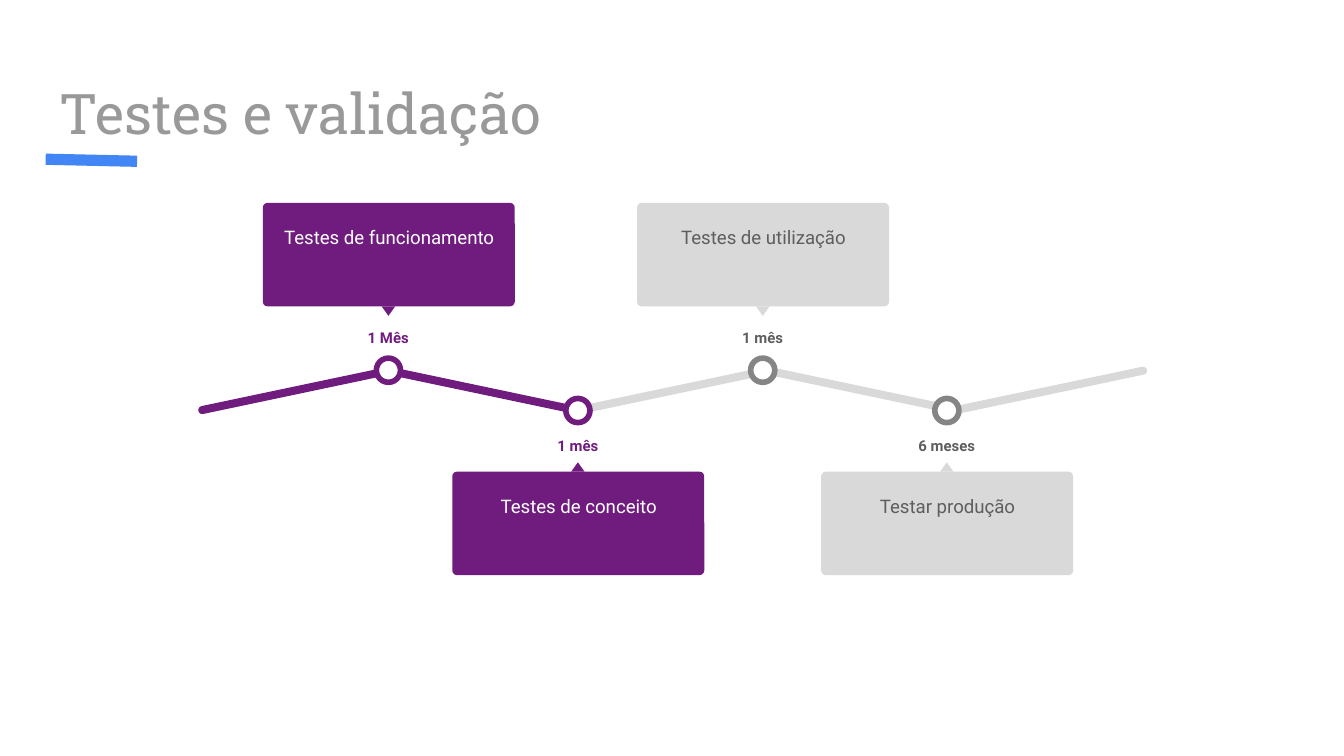
"""Draw a zigzag timeline of test stages with a callout card at each stop."""
from dataclasses import dataclass
from typing import Any

from lxml.etree import SubElement
from pptx import Presentation
from pptx.dml.color import RGBColor
from pptx.enum.shapes import MSO_CONNECTOR, MSO_SHAPE
from pptx.enum.text import MSO_ANCHOR, MSO_AUTO_SIZE, PP_ALIGN
from pptx.oxml.ns import qn
from pptx.util import Pt

SCALE = 4572


@dataclass(frozen=True)
class Theme:
    purple: str = "701C7F"
    silver: str = "D9D9D9"
    ring: str = "858585"
    dark: str = "5E5E5E"
    pale: str = "999999"
    white: str = "FFFFFF"
    blue: str = "4285F4"
    body: str = "Roboto"
    head: str = "Roboto Slab"
    title: int = 30
    card: int = 10
    label: int = 8
    rule: int = 6
    edge: int = 3


@dataclass(frozen=True)
class Box:
    left: int
    top: int
    width: int
    height: int

    def scaled(self) -> tuple[int, ...]:
        return tuple(px(n) for n in (self.left, self.top, self.width, self.height))


@dataclass(frozen=True)
class Look:
    fill: str
    ring: str
    text: str
    label: str


@dataclass(frozen=True)
class Stop:
    mid: int
    high: bool
    name: str
    time: str
    look: Look


@dataclass(frozen=True)
class Piece:
    left: int
    angle: float
    color: str


THEME = Theme()
DONE = Look(THEME.purple, THEME.purple, THEME.white, THEME.purple)
NEXT = Look(THEME.silver, THEME.ring, THEME.dark, THEME.dark)
RISE, FALL = -11.9, 11.9
PIECES = [
    Piece(292, RISE, THEME.purple),
    Piece(570, FALL, THEME.purple),
    Piece(854, RISE, THEME.silver),
    Piece(1134, FALL, THEME.silver),
    Piece(1414, RISE, THEME.silver),
]
STOPS = [
    Stop(578, True, "Testes de funcionamento", "1 Mês", DONE),
    Stop(860, False, "Testes de conceito", "1 mês", DONE),
    Stop(1135, True, "Testes de utilização", "1 mês", NEXT),
    Stop(1409, False, "Testar produção", "6 meses", NEXT),
]
CENTER = {"alignment": PP_ALIGN.CENTER, "line_spacing": 1.15, "space_after": Pt(16)}


def px(count: int) -> int:
    return count * SCALE


def apply(target: Any, values: dict[str, Any]) -> None:
    for key, value in values.items():
        setattr(target, key, value)


def draw_shape(shapes: Any, kind: MSO_SHAPE, box: Box, color: str,
               turn: float = 0, curve: float | None = None) -> Any:
    shape = shapes.add_shape(kind, *box.scaled())
    shape.shadow.inherit = False
    shape.rotation = turn
    shape.fill.solid()
    shape.fill.fore_color.rgb = RGBColor.from_string(color)
    shape.line.fill.background()
    if curve is not None:
        shape.adjustments[0] = curve
    return shape


def draw_text(shapes: Any, box: Box, text: str, color: str, font: dict[str, Any],
              para: dict[str, Any], fit: MSO_AUTO_SIZE = MSO_AUTO_SIZE.NONE) -> None:
    frame = shapes.add_textbox(*box.scaled()).text_frame
    inset = px(20)
    apply(frame, {"word_wrap": True, "vertical_anchor": MSO_ANCHOR.TOP, "auto_size": fit,
                  "margin_left": inset, "margin_top": inset,
                  "margin_right": inset, "margin_bottom": inset})
    line = frame.paragraphs[0]
    apply(line, para)
    run = line.add_run()
    run.text = text
    apply(run.font, font)
    run.font.color.rgb = RGBColor.from_string(color)


def draw_rule(shapes: Any) -> None:
    rule = shapes.add_connector(MSO_CONNECTOR.STRAIGHT, px(68), px(237), px(204), px(240))
    rule.line.color.rgb = RGBColor.from_string(THEME.blue)
    rule.line.width = Pt(THEME.rule)
    SubElement(rule._element.spPr, qn("a:effectLst"))


def draw_piece(shapes: Any, piece: Piece) -> None:
    draw_shape(shapes, MSO_SHAPE.ROUNDED_RECTANGLE, Box(piece.left, 575, 296, 12),
               piece.color, piece.angle, 0.5)


def draw_stop(shapes: Any, stop: Stop) -> None:
    look, mid = stop.look, stop.mid
    card, tip, dot, label, turn = (
        (302, 456, 533, 470, 180) if stop.high else (702, 688, 593, 630, 0))
    group = shapes.add_group_shape().shapes
    draw_shape(group, MSO_SHAPE.ROUNDED_RECTANGLE, Box(mid - 187, card, 375, 154),
               look.fill, curve=0.045)
    draw_shape(group, MSO_SHAPE.ISOSCELES_TRIANGLE, Box(mid - 10, tip, 20, 14),
               look.fill, turn)
    draw_text(group, Box(mid - 177, card + 9, 356, 136), stop.name, look.text,
              {"name": THEME.body, "size": Pt(THEME.card)}, CENTER)
    ring = draw_shape(group, MSO_SHAPE.OVAL, Box(mid - 18, dot, 36, 36), THEME.white)
    ring.line.color.rgb = RGBColor.from_string(look.ring)
    ring.line.width = Pt(THEME.edge)
    draw_text(group, Box(mid - 76, label, 152, 60), stop.time, look.label,
              {"name": THEME.body, "size": Pt(THEME.label), "bold": True}, CENTER,
              MSO_AUTO_SIZE.SHAPE_TO_FIT_TEXT)


def main() -> None:
    deck = Presentation()
    apply(deck, {"slide_width": px(2000), "slide_height": px(1125)})
    shapes = deck.slides.add_slide(deck.slide_layouts[6]).shapes
    draw_text(shapes, Box(69, 97, 1864, 126), "Testes e validação", THEME.pale,
              {"name": THEME.head, "size": Pt(THEME.title)}, {"alignment": PP_ALIGN.LEFT})
    draw_rule(shapes)
    for piece in PIECES:
        draw_piece(shapes, piece)
    for stop in STOPS:
        draw_stop(shapes, stop)
    deck.save("out.pptx")


if __name__ == "__main__":
    main()
